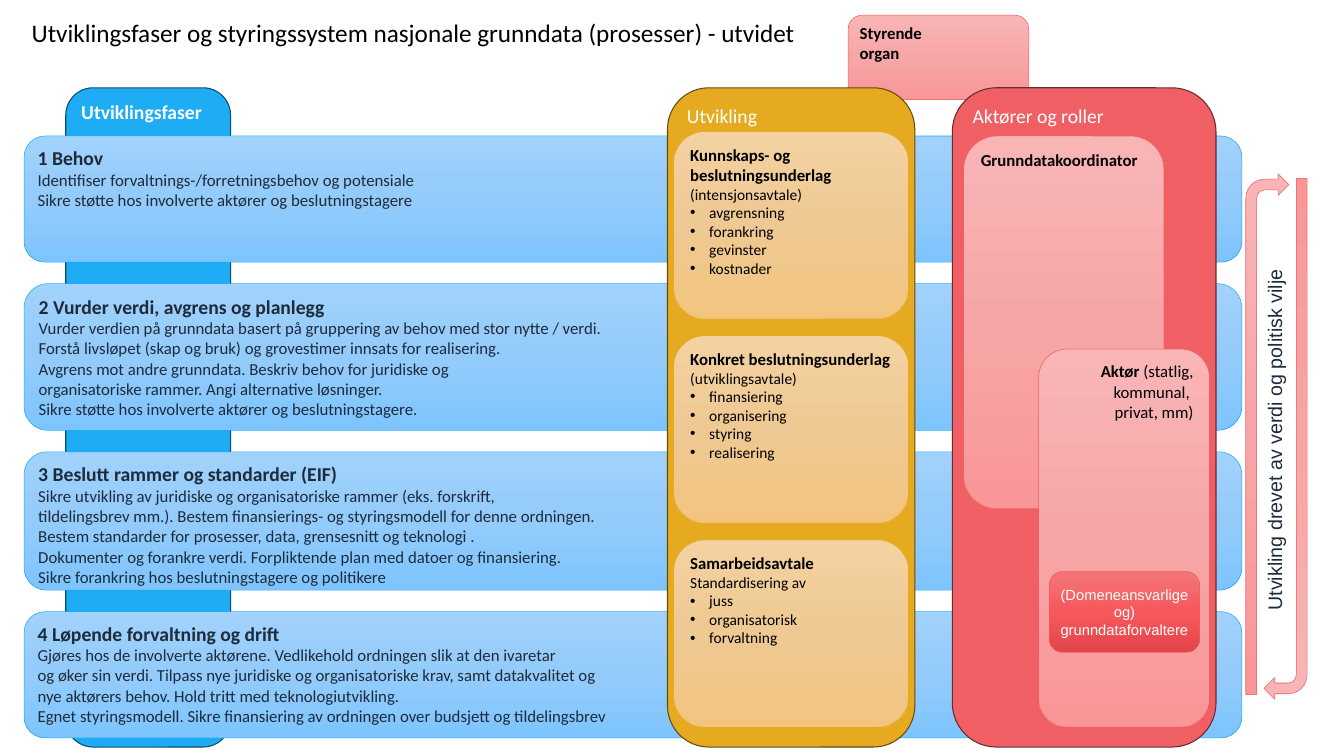
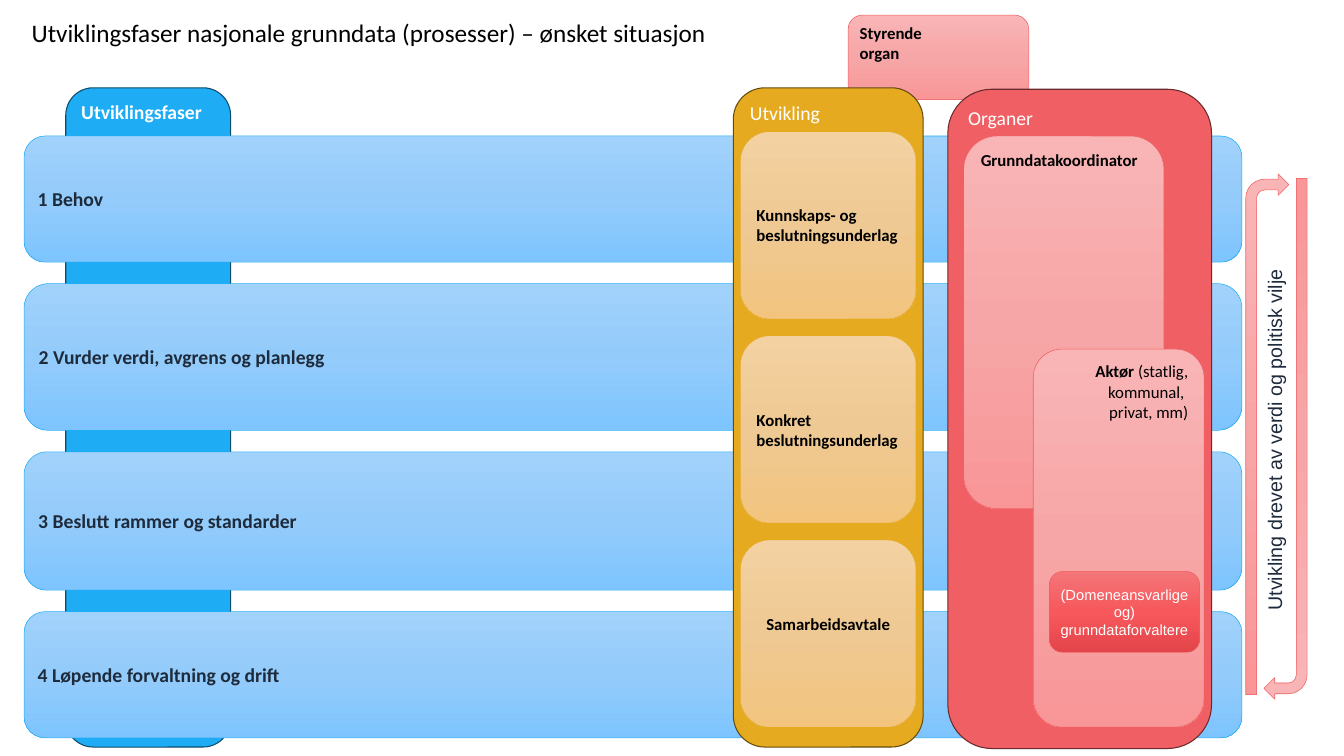
from copy import deepcopy
from dataclasses import dataclass
from typing import NamedTuple

from lxml.etree import SubElement
from pptx import Presentation
from pptx.dml.color import RGBColor
from pptx.enum.shapes import MSO_SHAPE
from pptx.enum.text import MSO_ANCHOR, MSO_AUTO_SIZE, PP_ALIGN
from pptx.oxml.ns import qn
from pptx.util import Cm, Pt

# Colours: a single hex is a solid fill, three are a vertical gradient
BLACK, WHITE, NAVY = "000000", "FFFFFF", "1E2B3C"


class Look(NamedTuple):
    fill: tuple[str, ...]
    line: str
    width: float
    ink: str


BLUE_COLUMN = Look(("1EACF5",), "0D4B6B", 1, WHITE)
GOLD_COLUMN = Look(("E5AA20",), "644B0E", 1, WHITE)
RED_COLUMN = Look(("F05F63",), "692A2B", 1, WHITE)
BLUE_BAND = Look(("A1D2FC", "93CBFA", "7EC5FF"), "1EACF5", 0.5, NAVY)
GOLD_CARD = Look(("F3D1A1", "EFC993", "F2C47E"), "E5AA20", 0.5, BLACK)
PINK = Look(("F9B5B6", "F7A6A7", "F99698"), "F05F63", 0.5, BLACK)
RED_CARD = Look(("F37578", "F7585C", "E4454A"), "F05F63", 0.5, WHITE)


class Run(NamedTuple):
    text: str
    size: float = 16
    bold: bool = False


class Para(NamedTuple):
    runs: tuple[Run, ...]
    bullet: bool = False


@dataclass
class Box:
    x: float
    y: float
    w: float
    h: float
    look: Look
    paras: tuple[Para, ...] = ()
    shape: MSO_SHAPE = MSO_SHAPE.ROUNDED_RECTANGLE
    align: PP_ALIGN = PP_ALIGN.LEFT
    anchor: MSO_ANCHOR = MSO_ANCHOR.TOP
    font: str = "Calibri"
    rotation: int = 0
    lift: float = 0


@dataclass
class Content:
    title: str
    title_w: float
    bands: list[tuple[Para, ...]]
    cards: list[tuple[Para, ...]]
    text_anchor: MSO_ANCHOR
    gold_x: float
    gold_w: float
    card_w: float
    red_title: str
    red_x: float
    red_y: float
    actor_x: float
    last_card_align: PP_ALIGN = PP_ALIGN.LEFT
    last_card_lift: float = 0


def rgb(value: str) -> RGBColor:
    return RGBColor.from_string(value)


def para(text: str, size: float = 16, bold: bool = False) -> Para:
    return Para((Run(text, size, bold),))


def band(heading: str, body: str = "") -> tuple[Para, ...]:
    head = para(heading, 18.7, True)
    return (head, para(body)) if body else (head,)


def card(heading: str, detail: str = "", *bullets: str) -> tuple[Para, ...]:
    runs = (Run(heading, 16, True),) + ((Run(detail, 14.7),) if detail else ())
    return (Para(runs), *(Para((Run(b, 14.7),), True) for b in bullets))


def write(tf, paras: tuple[Para, ...], color: str, font: str, align: PP_ALIGN) -> None:
    for i, item in enumerate(paras):
        p = tf.add_paragraph() if i else tf.paragraphs[0]
        p.alignment = align
        p.space_before = Pt(0)
        if item.bullet:
            ppr = p._p.get_or_add_pPr()
            ppr.set("marL", str(Cm(0.64)))
            ppr.set("indent", str(-Cm(0.64)))
            SubElement(ppr, qn("a:buFont")).set("typeface", "Arial")
            SubElement(ppr, qn("a:buChar")).set("char", "•")
        for run in item.runs:
            for n, line in enumerate(run.text.split("\v")):
                if n:
                    p.add_line_break()
                    br = p._p.findall(qn("a:br"))[-1]
                    SubElement(br, qn("a:rPr")).set("sz", str(round(run.size * 100)))
                if not line:
                    continue
                r = p.add_run()
                r.text = line
                r.font.size, r.font.bold, r.font.name = Pt(run.size), run.bold, font
                r.font.color.rgb = rgb(color)


def paint(sp, look: Look) -> None:
    sp.shadow.inherit = False
    if len(look.fill) == 1:
        sp.fill.solid()
        sp.fill.fore_color.rgb = rgb(look.fill[0])
    else:
        sp.fill.gradient()
        sp.fill.gradient_angle = 270
        stops = sp._element.spPr.find(qn("a:gradFill")).find(qn("a:gsLst"))
        stops.insert(1, deepcopy(stops[0]))
        for i, (stop, color) in enumerate(zip(sp.fill.gradient_stops, look.fill)):
            stop.position = i / 2
            stop.color.rgb = rgb(color)
    sp.line.color.rgb = rgb(look.line)
    sp.line.width = Pt(look.width)


def draw(s, box: Box) -> None:
    sp = s.shapes.add_shape(box.shape, Cm(box.x), Cm(box.y), Cm(box.w), Cm(box.h))
    sp.rotation = box.rotation
    paint(sp, box.look)
    tf = sp.text_frame
    tf.word_wrap = True
    tf.vertical_anchor = box.anchor
    # Tighter on the side the text does not lean on, so long words fit
    tf.margin_left = Cm(0.15 if box.align == PP_ALIGN.CENTER else 0.25)
    tf.margin_right = Cm(0.25 if box.align == PP_ALIGN.RIGHT else 0.15)
    tf.margin_bottom = Cm(0.13 + box.lift)
    write(tf, box.paras, box.look.ink, box.font, box.align)


def draw_title(s, text: str, width: float) -> None:
    sp = s.shapes.title
    sp.left, sp.top, sp.width, sp.height = Cm(0.81), Cm(0.46), Cm(width), Cm(1.27)
    tf = sp.text_frame
    tf.word_wrap = True
    tf.auto_size = MSO_AUTO_SIZE.NONE
    tf.vertical_anchor = MSO_ANCHOR.TOP
    write(tf, (para(text, 24),), BLACK, "Calibri", PP_ALIGN.LEFT)


def draw_bands(s, c: Content) -> None:
    y = 4.57
    for paras, h in zip(c.bands, (4.24, 4.93, 4.65, 4.24)):
        draw(s, Box(0.81, y, 40.92, h, BLUE_BAND, paras, anchor=c.text_anchor))
        y += h + 0.72


def draw_development(s, c: Content) -> None:
    draw(s, Box(c.gold_x, 2.95, c.gold_w, 22.15, GOLD_COLUMN, (para("Utvikling", 18.7),)))
    x = c.gold_x + (c.gold_w - c.card_w) / 2
    for i, paras in enumerate(c.cards):
        box = Box(x, 4.42 + i * 6.86, c.card_w, 6.3, GOLD_CARD, paras, anchor=c.text_anchor)
        if i == len(c.cards) - 1:
            box.align, box.lift = c.last_card_align, c.last_card_lift
        draw(s, box)


def draw_actors(s, c: Content) -> None:
    actor = Para((Run("Aktør", 16, True), Run(" (statlig, kommunal, \vprivat, mm)")))
    draw(s, Box(c.red_x, c.red_y, 8.86, 22.15, RED_COLUMN, (para(c.red_title, 18.7),)))
    draw(s, Box(32.38, 4.57, 6.73, 12.52, PINK, (para("Grunndatakoordinator", 16, True),)))
    draw(s, Box(c.actor_x, 11.73, 5.74, 12.7, PINK, (actor,), align=PP_ALIGN.RIGHT))
    draw(s, Box(35.26, 19.2, 5.05, 2.72, RED_CARD,
                (para("(Domeneansvarlige og) grunndataforvaltere", 14),),
                align=PP_ALIGN.CENTER, anchor=MSO_ANCHOR.MIDDLE, font="Arial"))


def draw_cycle(s) -> None:
    for x, y, rotation in ((42.47, 5.99, 180), (41.86, 5.84, 0)):
        draw(s, Box(x, y, 1.45, 17.5, PINK, shape=MSO_SHAPE.BENT_ARROW, rotation=rotation))
    sp = s.shapes.add_textbox(Cm(36.8), Cm(14.22), Cm(12.04), Cm(1.04))
    sp.rotation = 270
    sp.text_frame.word_wrap = False
    write(sp.text_frame, (para("Utvikling drevet av verdi og politisk vilje", 18.7),),
          NAVY, "Arial", PP_ALIGN.LEFT)


def add_slide(prs, c: Content) -> None:
    s = prs.slides.add_slide(prs.slide_layouts[5])
    draw_title(s, c.title, c.title_w)
    draw(s, Box(2.21, 2.95, 5.54, 22.15, BLUE_COLUMN, (para("Utviklingsfaser", 18.7, True),)))
    draw(s, Box(28.5, 0.51, 6.07, 2.84, PINK,
                (para("Styrende", 16, True), para("organ", 16, True))))
    draw_bands(s, c)
    draw_development(s, c)
    draw_actors(s, c)
    draw_cycle(s)


EXTENDED = Content(
    title="Utviklingsfaser og styringssystem nasjonale grunndata (prosesser) - utvidet",
    title_w=26.39,
    bands=[
        band("1 Behov",
             "Identifiser forvaltnings-/forretningsbehov og potensiale\v"
             "Sikre støtte hos involverte aktører og beslutningstagere"),
        band("2 Vurder verdi, avgrens og planlegg",
             "Vurder verdien på grunndata basert på gruppering av behov med stor nytte / verdi. \v"
             "Forstå livsløpet (skap og bruk) og grovestimer innsats for realisering. \v"
             "Avgrens mot andre grunndata. Beskriv behov for juridiske og \v"
             "organisatoriske rammer. Angi alternative løsninger.\v"
             "Sikre støtte hos involverte aktører og beslutningstagere."),
        band("3 Beslutt rammer og standarder (EIF)",
             "Sikre utvikling av juridiske og organisatoriske rammer (eks. forskrift, \v"
             "tildelingsbrev mm.). Bestem finansierings- og styringsmodell for denne ordningen. \v"
             "Bestem standarder for prosesser, data, grensesnitt og teknologi .\v"
             "Dokumenter og forankre verdi. Forpliktende plan med datoer og finansiering. \v"
             "Sikre forankring hos beslutningstagere og politikere"),
        band("4 Løpende forvaltning og drift",
             "Gjøres hos de involverte aktørene. Vedlikehold ordningen slik at den ivaretar \v"
             "og øker sin verdi. Tilpass nye juridiske og organisatoriske krav, "
             "samt datakvalitet og \v"
             "nye aktørers behov. Hold tritt med teknologiutvikling.\v"
             "Egnet styringsmodell. Sikre finansiering av ordningen over budsjett "
             "og tildelingsbrev"),
    ],
    cards=[
        card("Kunnskaps- og beslutningsunderlag ", "(intensjonsavtale)",
             "avgrensning", "forankring", "gevinster", "kostnader"),
        card("Konkret beslutningsunderlag ", "(utviklingsavtale)",
             "finansiering", "organisering", "styring", "realisering"),
        card("Samarbeidsavtale\v", "Standardisering av",
             "juss", "organisatorisk", "forvaltning"),
    ],
    text_anchor=MSO_ANCHOR.TOP,
    gold_x=22.43, gold_w=8.31, card_w=7.9,
    red_title="Aktører og roller", red_x=32, red_y=2.95, actor_x=34.9,
)

DESIRED = Content(
    title="Utviklingsfaser nasjonale grunndata (prosesser) – ønsket situasjon",
    title_w=23.37,
    bands=[band("1 Behov"), band("2 Vurder verdi, avgrens og planlegg"),
           band("3 Beslutt rammer og standarder"), band("4 Løpende forvaltning og drift")],
    cards=[card("Kunnskaps- og beslutningsunderlag"), card("Konkret beslutningsunderlag"),
           card("Samarbeidsavtale")],
    text_anchor=MSO_ANCHOR.MIDDLE,
    gold_x=24.64, gold_w=6.38, card_w=5.9,
    red_title="Organer", red_x=31.85, red_y=3, actor_x=34.72,
    last_card_align=PP_ALIGN.CENTER, last_card_lift=0.64,
)


def main() -> None:
    prs = Presentation()
    prs.slide_width, prs.slide_height = Cm(45.16), Cm(25.4)
    for content in (EXTENDED, DESIRED):
        add_slide(prs, content)
    prs.save("out.pptx")


if __name__ == "__main__":
    main()
